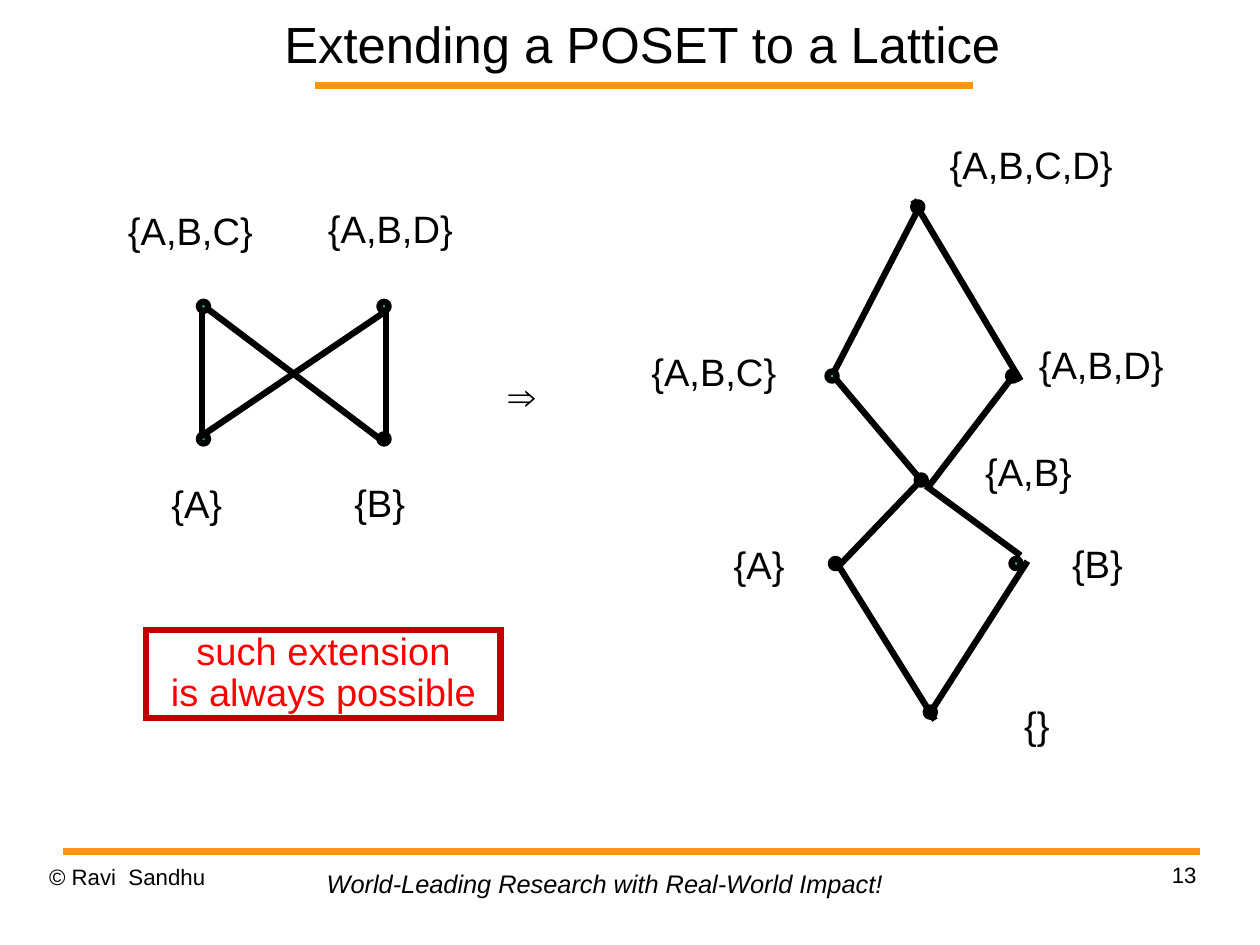
"""Build the slide that extends a partially ordered set to a lattice."""
from dataclasses import dataclass

from lxml import etree
from pptx import Presentation
from pptx import util as u
from pptx.dml.color import RGBColor
from pptx.enum import shapes, text
from pptx.oxml.ns import qn

PX = 9144
SLIDE_WIDTH = u.Emu(10080625)
SLIDE_HEIGHT = u.Emu(7559675)
COLOURS = {
    "ink": "000000",
    "rule": "FF950E",
    "node": "00CC99",
    "frame": "C00000",
    "remark": "FF0000",
}
FONT = "Arial"
NODE_SIZE = 8
EDGE_WIDTH = 4
RULE_WIDTH = 4.31
LABEL_HEIGHT = 46
LABEL_INSETS = (7, 3)
FOOTER_INSETS = (10, 5)
NO_INSETS = (0, 0)


@dataclass(frozen=True)
class Label:
    left: int
    top: int
    width: int
    words: str
    height: int = LABEL_HEIGHT
    size: int = 24
    spacing: float = 0.87
    insets: tuple[int, int] = LABEL_INSETS
    align: text.PP_ALIGN = text.PP_ALIGN.LEFT
    italic: bool = False
    colour: str = "ink"
    wrap: bool = False
    anchor: text.MSO_ANCHOR = text.MSO_ANCHOR.TOP


@dataclass(frozen=True)
class Line:
    x1: int
    y1: int
    x2: int
    y2: int
    colour: str = "ink"
    width: float = EDGE_WIDTH


@dataclass(frozen=True)
class Node:
    left: int
    top: int


TITLE = Label(241, 0, 643, "Extending a POSET to a Lattice", height=75, size=32,
              spacing=1, insets=NO_INSETS, align=text.PP_ALIGN.CENTER,
              wrap=True, anchor=text.MSO_ANCHOR.MIDDLE)
REMARK = Label(128, 551, 310, "such extension\nis always possible", height=77,
               spacing=0.89, align=text.PP_ALIGN.CENTER, colour="remark", wrap=True)
RULES = [
    Line(276, 75, 851, 75, "rule", RULE_WIDTH),
    Line(55, 745, 1050, 745, "rule", RULE_WIDTH),
]
FOOTERS = [
    Label(43, 755, 257, "© Ravi  Sandhu", 57, 14, 1.01, NO_INSETS, wrap=True),
    Label(790, 753, 257, "13", 57, 14, 1.01, NO_INSETS, text.PP_ALIGN.RIGHT, wrap=True),
    Label(276, 755, 508, "World-Leading Research with Real-World Impact!", 37, 16, 1,
          FOOTER_INSETS, italic=True),
]
POSET_LABELS = [
    Label(143, 423, 70, "{A}"),
    Label(303, 422, 70, "{B}"),
    Label(105, 184, 136, "{A,B,C}"),
    Label(280, 182, 136, "{A,B,D}"),
]
ARROW = Label(438, 320, 34, "⇒", height=54, spacing=1.08)
LATTICE_LABELS = [
    Label(635, 476, 70, "{A}"),
    Label(931, 475, 70, "{B}"),
    Label(563, 307, 136, "{A,B,C}"),
    Label(902, 301, 136, "{A,B,D}"),
    Label(824, 126, 170, "{A,B,C,D}"),
    Label(889, 616, 45, "{}"),
    Label(855, 395, 103, "{A,B}"),
]
POSET_NODES = [Node(left, top) for top in (380, 264) for left in (174, 332)]
LATTICE_NODES = [
    Node(727, 489), Node(885, 489), Node(724, 325), Node(882, 325),
    Node(802, 416), Node(810, 619), Node(799, 177),
]
POSET_EDGES = [
    Line(180, 269, 335, 386),
    Line(338, 272, 174, 383),
    Line(177, 272, 177, 380),
    Line(338, 269, 338, 386),
]
LATTICE_EDGES = [
    Line(730, 330, 805, 419),
    Line(810, 425, 893, 486),
    Line(899, 491, 813, 625),
    Line(818, 630, 730, 489),
    Line(735, 494, 807, 419),
    Line(813, 425, 888, 327),
    Line(893, 333, 799, 175),
    Line(805, 180, 730, 325),
]


def px(*lengths: int) -> list[u.Emu]:
    """Turn pixel lengths into EMU."""
    return [u.Emu(length * PX) for length in lengths]


def colour(name: str) -> RGBColor:
    """Look up a named colour."""
    return RGBColor.from_string(COLOURS[name])


def write(box, label: Label) -> None:
    """Fill a shape with the text and format of a label."""
    frame = box.text_frame
    frame.text = label.words
    frame.word_wrap = label.wrap
    frame.auto_size = text.MSO_AUTO_SIZE.NONE
    frame.vertical_anchor = label.anchor
    side, edge = px(*label.insets)
    frame.margin_left = frame.margin_right = side
    frame.margin_top = frame.margin_bottom = edge
    for para in frame.paragraphs:
        para.alignment = label.align
        para.line_spacing = label.spacing
        para.space_before = u.Pt(0)
        for span in para.runs:
            span.font.name = FONT
            span.font.size = u.Pt(label.size)
            span.font.italic = label.italic
            span.font.color.rgb = colour(label.colour)


def draw_title(page, label: Label) -> None:
    """Move and format the title placeholder."""
    box = page.shapes.title
    box.left, box.top, box.width, box.height = px(
        label.left, label.top, label.width, label.height)
    write(box, label)


def draw_label(page, label: Label) -> None:
    """Add a text box."""
    write(page.shapes.add_textbox(
        *px(label.left, label.top, label.width, label.height)), label)


def draw_remark(page, label: Label) -> None:
    """Add the framed remark with sharp corners."""
    box = page.shapes.add_shape(
        shapes.MSO_SHAPE.RECTANGLE,
        *px(label.left, label.top, label.width, label.height))
    box.shadow.inherit = False
    box.fill.background()
    box.line.color.rgb = colour("frame")
    box.line.width = u.Pt(EDGE_WIDTH)
    outline = box._element.spPr.find(qn("a:ln"))
    etree.SubElement(outline, qn("a:miter"), lim="800000")
    write(box, label)


def draw_node(page, node: Node) -> None:
    """Add one vertex of a diagram."""
    dot = page.shapes.add_shape(
        shapes.MSO_SHAPE.OVAL, *px(node.left, node.top, NODE_SIZE, NODE_SIZE))
    dot.shadow.inherit = False
    dot.fill.solid()
    dot.fill.fore_color.rgb = colour("node")
    dot.line.color.rgb = colour("ink")
    dot.line.width = u.Pt(EDGE_WIDTH)


def draw_line(page, line: Line) -> None:
    """Add a straight line without a shadow."""
    edge = page.shapes.add_connector(
        shapes.MSO_CONNECTOR.STRAIGHT, *px(line.x1, line.y1, line.x2, line.y2))
    edge.line.color.rgb = colour(line.colour)
    edge.line.width = u.Pt(line.width)
    etree.SubElement(edge._element.spPr, qn("a:effectLst"))


def main() -> None:
    """Build and save the deck."""
    deck = Presentation()
    deck.slide_width, deck.slide_height = SLIDE_WIDTH, SLIDE_HEIGHT
    page = deck.slides.add_slide(deck.slide_layouts[5])
    draw_title(page, TITLE)
    draw_remark(page, REMARK)
    for label in [*FOOTERS, *POSET_LABELS, ARROW, *LATTICE_LABELS]:
        draw_label(page, label)
    for node in POSET_NODES + LATTICE_NODES:
        draw_node(page, node)
    for line in RULES + POSET_EDGES + LATTICE_EDGES:
        draw_line(page, line)
    deck.save("out.pptx")


if __name__ == "__main__":
    main()
